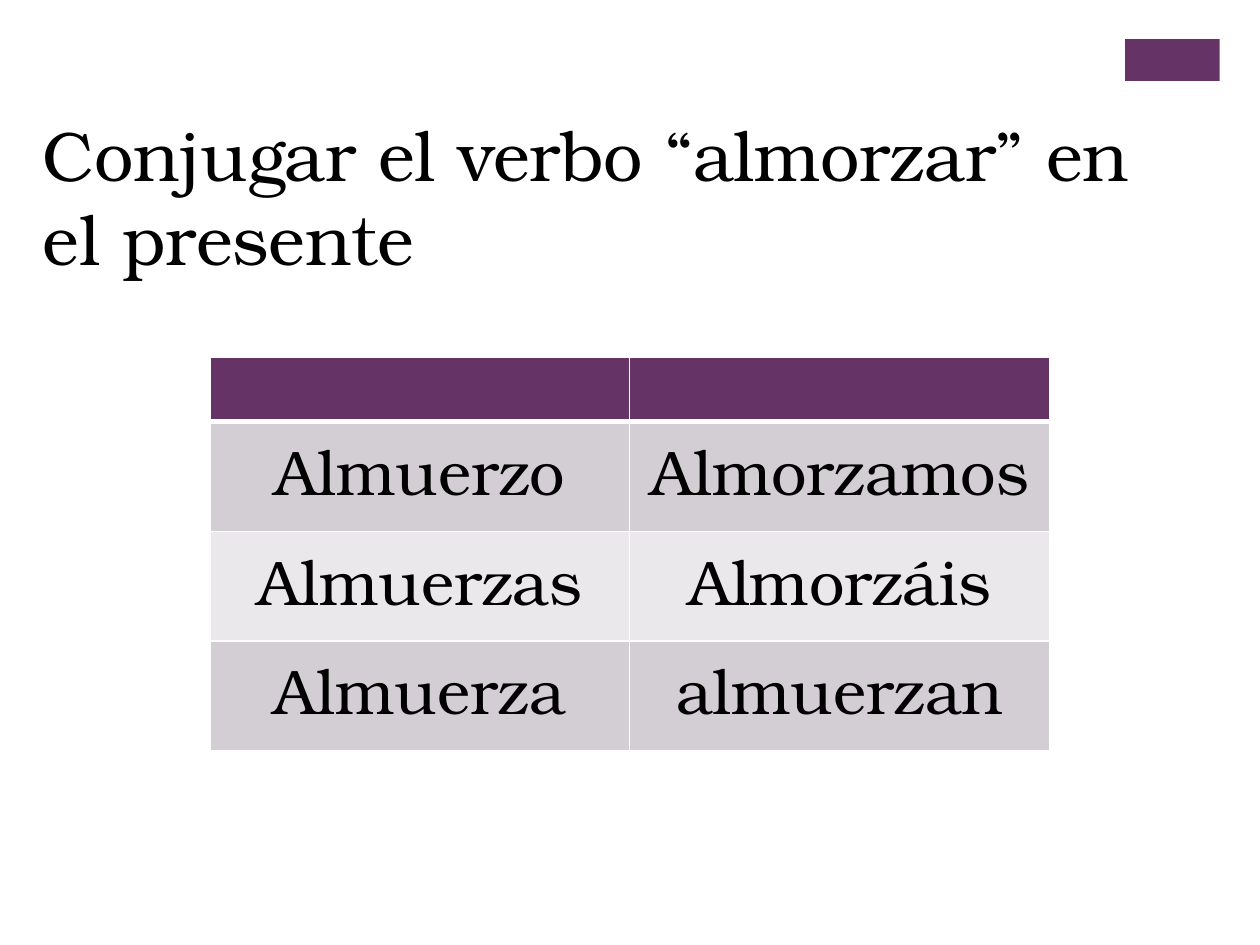
from lxml.etree import SubElement
from pptx import Presentation
from pptx.dml.color import RGBColor
from pptx.enum.shapes import MSO_SHAPE
from pptx.enum.text import MSO_ANCHOR, PP_ALIGN
from pptx.oxml.ns import qn
from pptx.util import Cm, Pt

FONT = "TeX Gyre Bonum"
PURPLE = "663366"
BANDS = ("D3CED3", "EAE8EA")
FORMS = [
    ("Almuerzo", "Almorzamos"),
    ("Almuerzas", "Almorzáis"),
    ("Almuerza", "almuerzan"),
]


def set_color(fill, color):
    """Make a fill solid in the given hex colour."""
    fill.solid()
    fill.fore_color.rgb = RGBColor.from_string(color)


def add_run(p, text, size):
    """Add a black run in the slide font."""
    r = p.add_run()
    r.text = text
    r.font.name = FONT
    r.font.size = Pt(size)
    set_color(r.font.fill, "000000")


def set_borders(cell, bottom=1):
    """Draw white borders around a cell."""
    tcPr = cell._tc.get_or_add_tcPr()
    for side, width in (("L", 1), ("R", 1), ("T", 1), ("B", bottom)):
        ln = SubElement(tcPr, qn(f"a:ln{side}"), w=str(Pt(width)))
        fill = SubElement(ln, qn("a:solidFill"))
        SubElement(fill, qn("a:srgbClr"), val="FFFFFF")


def add_corner_block(slide, left, top, width, height):
    """Place the purple block in the upper right corner."""
    sp = slide.shapes.add_shape(MSO_SHAPE.RECTANGLE, left, top, width, height)
    sp.shadow.inherit = False
    set_color(sp.fill, PURPLE)
    sp.line.fill.background()


def add_title(slide, left, top, width, height):
    """Move and format the title placeholder."""
    sp = slide.shapes.title
    sp.left, sp.top, sp.width, sp.height = left, top, width, height
    tf = sp.text_frame
    tf.word_wrap = True
    tf.vertical_anchor = MSO_ANCHOR.MIDDLE
    p = tf.paragraphs[0]
    p.alignment = PP_ALIGN.LEFT
    add_run(p, "Conjugar el verbo “almorzar” en el presente", 40)


def add_verb_table(slide, left, top, width, height):
    """Build the conjugation table with an empty header row."""
    rows = [("", "")] + FORMS
    table = slide.shapes.add_table(len(rows), 2, left, top, width, height).table
    header = Cm(1.3)
    for i, row in enumerate(rows):
        table.rows[i].height = header if i == 0 else (height - header) // len(FORMS)
        for j, text in enumerate(row):
            cell = table.cell(i, j)
            set_borders(cell, bottom=1 if i else 3)
            set_color(cell.fill, BANDS[(i - 1) % 2] if i else PURPLE)
            if text:
                p = cell.text_frame.paragraphs[0]
                p.alignment = PP_ALIGN.CENTER
                add_run(p, text, 36)
    for j in range(2):
        table.cell(1, j)._tc.get_or_add_tcPr().find(qn("a:lnT")).set("w", str(Pt(3)))


def main():
    """Build and save the slide."""
    prs = Presentation()
    prs.slide_width, prs.slide_height = Cm(25.4), Cm(19.05)
    slide = prs.slides.add_slide(prs.slide_layouts[5])
    add_corner_block(slide, Cm(22.68), Cm(0.79), Cm(1.91), Cm(0.84))
    add_title(slide, Cm(0.61), Cm(2.11), Cm(23.95), Cm(3.68))
    add_verb_table(slide, Cm(4.23), Cm(7.2), Cm(16.93), Cm(7.94))
    prs.save("out.pptx")


if __name__ == "__main__":
    main()
